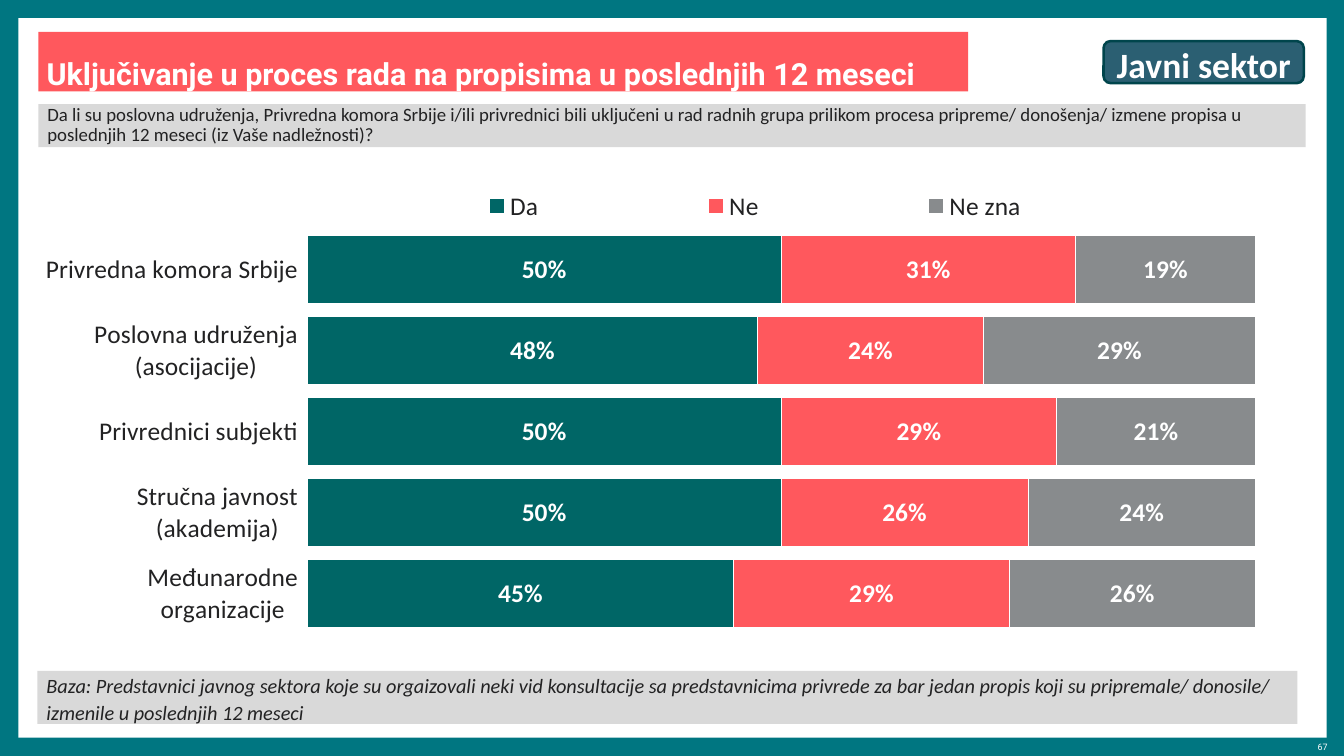
from lxml import etree
from pptx import Presentation
from pptx.chart.data import CategoryChartData
from pptx.dml.color import RGBColor
from pptx.enum.chart import XL_CHART_TYPE, XL_LABEL_POSITION, XL_LEGEND_POSITION
from pptx.enum.shapes import MSO_SHAPE
from pptx.enum.text import MSO_ANCHOR, MSO_AUTO_SIZE, PP_ALIGN
from pptx.util import Inches, Pt

RECT, ROUNDED = MSO_SHAPE.RECTANGLE, MSO_SHAPE.ROUNDED_RECTANGLE
LEFT, CENTER, RIGHT = PP_ALIGN.LEFT, PP_ALIGN.CENTER, PP_ALIGN.RIGHT
C_NS = "http://schemas.openxmlformats.org/drawingml/2006/chart"

BACKGROUND, WHITE, CORAL, LIGHT_GREY = "007681", "FFFFFF", "FF585D", "D9D9D9"
DARK, BADGE_FILL, BADGE_LINE = "222223", "2B5F72", "00454C"

TITLE = "Uključivanje u proces rada na propisima u poslednjih 12 meseci"
QUESTION = ("Da li su poslovna udruženja, Privredna komora Srbije i/ili privrednici bili "
            "uključeni u rad radnih grupa prilikom procesa pripreme/ donošenja/ izmene "
            "propisa u poslednjih 12 meseci (iz Vaše nadležnosti)?")
BASE = ("Baza: Predstavnici javnog sektora koje su orgaizovali neki vid konsultacije sa "
        "predstavnicima privrede za bar jedan propis koji su pripremale/ donosile/ "
        "izmenile u poslednjih 12 meseci")
BADGE = "Javni sektor"
PAGE_NUMBER = "67"

CATEGORIES = ["Privredna komora Srbije", "Poslovna udruženja (asocijacije)",
              "Privrednici subjekti", "Stručna javnost (akademija)",
              "Međunarodne organizacije"]
SERIES = [
    ("Da", "006666", [50, 48, 50, 50, 45]),
    ("Ne", CORAL, [31, 24, 29, 26, 29]),
    ("Ne zna", "888B8D", [19, 29, 21, 24, 26]),
]


def rgb(color):
    return RGBColor.from_string(color)


def set_font(font, size, color, name="Calibri", bold=False, italic=False):
    font.size, font.name, font.bold, font.italic = Pt(size), name, bold, italic
    font.color.rgb = rgb(color)


def set_fill(shape, color):
    shape.fill.solid()
    shape.fill.fore_color.rgb = rgb(color)


def write(shape, text, size, color, align=LEFT, spacing=1.1, insets=(0.1, 0, 0.1, 0), **style):
    tf = shape.text_frame
    tf.text = text
    tf.word_wrap = True
    tf.auto_size = MSO_AUTO_SIZE.NONE
    tf.vertical_anchor = MSO_ANCHOR.MIDDLE
    tf.margin_left, tf.margin_top, tf.margin_right, tf.margin_bottom = map(Inches, insets)
    p = tf.paragraphs[0]
    p.alignment, p.line_spacing = align, spacing
    p.space_before = Pt(0)
    set_font(p.runs[0].font, size, color, **style)


def add_box(s, kind, place, fill, line=None):
    box = s.shapes.add_shape(kind, *map(Inches, place))
    box.shadow.inherit = False
    set_fill(box, fill)
    if line:
        box.line.color.rgb = rgb(line)
        box.line.width = Pt(2)
    else:
        box.line.fill.background()
    return box


def place_inside(parent, index, x, y, w, h, inner=False):
    """Give the plot or legend a manual layout, as fractions of the chart."""
    for old in parent.findall(f"{{{C_NS}}}layout"):
        parent.remove(old)
    layout = etree.Element(f"{{{C_NS}}}layout")
    manual = etree.SubElement(layout, f"{{{C_NS}}}manualLayout")
    settings = [("layoutTarget", "inner")] if inner else []
    settings += [("xMode", "edge"), ("yMode", "edge"), ("x", x), ("y", y), ("w", w), ("h", h)]
    for tag, value in settings:
        etree.SubElement(manual, f"{{{C_NS}}}{tag}").set("val", str(value))
    parent.insert(index, layout)


def add_answers_chart(s):
    data = CategoryChartData(number_format='#"%"')
    data.categories = CATEGORIES
    for name, _, values in SERIES:
        data.add_series(name, values)
    place = map(Inches, (0.38, 1.93, 13.36, 5.44))
    chart = s.shapes.add_chart(XL_CHART_TYPE.BAR_STACKED_100, *place, data).chart
    set_font(chart.font, 18, DARK, "Roboto")
    chart.has_title = False

    plot = chart.plots[0]
    plot.gap_width, plot.overlap = 20, 100
    plot.vary_by_categories = False
    for series, (_, color, _) in zip(plot.series, SERIES):
        set_fill(series.format, color)
        series.format.line.color.rgb = rgb(WHITE)
        series.format.line.width = Pt(0.75)
        labels = series.data_labels
        labels.show_value = True
        labels.number_format, labels.number_format_is_linked = '#"%"', False
        labels.position = XL_LABEL_POSITION.CENTER
        set_font(labels.font, 20, WHITE, bold=True)

    axis = chart.category_axis
    axis.reverse_order = True
    axis.format.line.fill.background()
    set_font(axis.tick_labels.font, 20, DARK)
    chart.value_axis.has_major_gridlines = False
    chart.value_axis.visible = False

    chart.has_legend = True
    legend = chart.legend
    legend.position = XL_LEGEND_POSITION.BOTTOM
    legend.include_in_layout = False
    set_font(legend.font, 20, DARK)

    root = chart._chartSpace
    place_inside(root.find(f".//{{{C_NS}}}plotArea"), 0, 0.223, 0.106, 0.777, 0.814, inner=True)
    place_inside(root.find(f".//{{{C_NS}}}legend"), 1, 0.24, 0.02, 0.7, 0.08)


def main():
    prs = Presentation()
    prs.slide_width, prs.slide_height = Inches(14.7), Inches(8.27)
    s = prs.slides.add_slide(prs.slide_layouts[5])
    set_fill(s.background, BACKGROUND)

    add_box(s, RECT, (0.2, 0.2, 14.31, 7.87), WHITE)
    number = s.shapes.add_textbox(*map(Inches, (13.73, 8.1, 0.79, 0.13)))
    write(number, PAGE_NUMBER, 7, WHITE, RIGHT, insets=(0, 0, 0, 0), name="Roboto")

    base = add_box(s, RECT, (0.41, 7.34, 13.78, 0.58), LIGHT_GREY)
    write(base, BASE, 16, DARK, italic=True)

    add_answers_chart(s)

    title = s.shapes.title
    title.left, title.top, title.width, title.height = map(Inches, (0.42, 0.35, 10.17, 0.65))
    set_fill(title, CORAL)
    write(title, TITLE, 24, WHITE, spacing=Pt(41), insets=(0.09, 0.08, 0.09, 0),
          name="Roboto", bold=True)
    # The title sits above the white panel in the stacking order.
    s.shapes[-1].element.addnext(title.element)

    question = add_box(s, RECT, (0.42, 1.14, 13.86, 0.47), LIGHT_GREY)
    write(question, QUESTION, 14.8, DARK, spacing=0.9)

    badge = add_box(s, ROUNDED, (12.07, 0.45, 2.19, 0.46), BADGE_FILL, BADGE_LINE)
    write(badge, BADGE, 28, WHITE, CENTER, insets=(0.04,) * 4, bold=True)

    prs.save("out.pptx")


if __name__ == "__main__":
    main()
